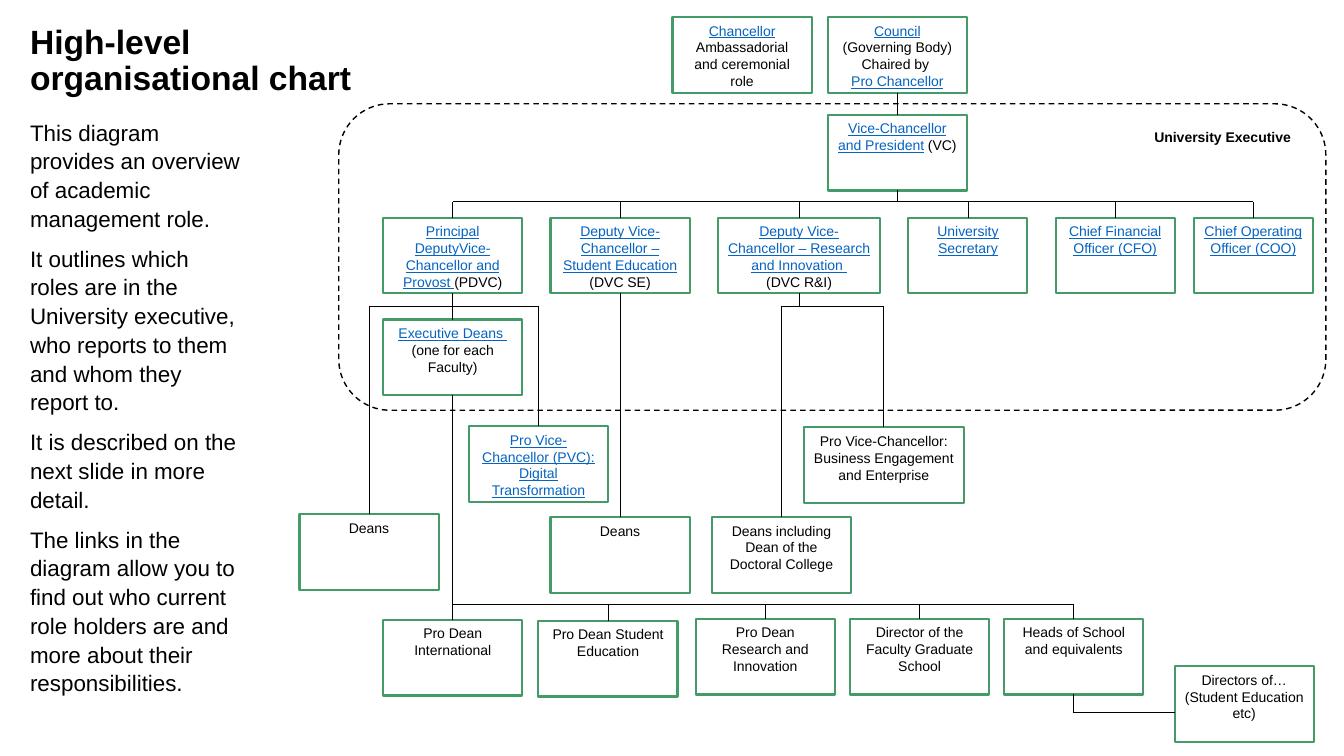
"""Build the high-level organisational chart slide of a university."""
from copy import deepcopy

from lxml.etree import SubElement
from pptx import Presentation
from pptx.dml.color import RGBColor
from pptx.enum.dml import MSO_LINE
from pptx.enum.shapes import MSO_CONNECTOR, MSO_SHAPE
from pptx.enum.text import MSO_ANCHOR, PP_ALIGN
from pptx.oxml.ns import qn
from pptx.util import Inches, Pt

COLOURS = {"border": "439B67", "link": "0563C1", "text": "000000"}
FONT = "Arial"
ROLE_WIDTH, OFFICER_WIDTH, ROLE_HEIGHT = 1.38, 1.18, 0.75
EXECUTIVE_TOP = 2.16
TOP, BOTTOM = 0, 2

INTRODUCTION = [
    "This diagram provides an overview of academic management role.",
    "It outlines which roles are in the University executive, who reports to them "
    "and whom they report to.",
    "It is described on the next slide in more detail.",
    "The links in the diagram allow you to find out who current role holders are "
    "and more about their responsibilities.",
]


def colour(name):
    """Return the named colour of the slide."""
    return RGBColor.from_string(COLOURS[name])


def add_run(paragraph, words, size, tone="text", bold=False):
    """Add one styled run, underlined when it is a link."""
    run = paragraph.add_run()
    run.text = words
    font = run.font
    font.name, font.size, font.bold = FONT, Pt(size), bold
    font.underline = tone == "link"
    font.color.rgb = colour(tone)
    return run


def add_lines(paragraph, words, size, tone):
    """Add words as runs, with a line break of the same style at each newline."""
    for number, line in enumerate(words.split("\n")):
        if number:
            paragraph.add_line_break()
            paragraph._p[-1].append(deepcopy(run._r.rPr))
        run = add_run(paragraph, line, size, tone)


def add_outline(slide, preset, left, top, width, height, tone, weight):
    """Add an unfilled shape with a coloured outline."""
    outline = slide.shapes.add_shape(
        preset, Inches(left), Inches(top), Inches(width), Inches(height))
    outline.shadow.inherit = False
    outline.fill.background()
    outline.line.color.rgb = colour(tone)
    outline.line.width = Pt(weight)
    return outline


def add_role(slide, left, top, *parts, width=ROLE_WIDTH):
    """Add a role box; each part is plain words or a (words, tone) pair."""
    role = add_outline(slide, MSO_SHAPE.RECTANGLE, left, top, width, ROLE_HEIGHT,
                       "border", 1.5)
    frame = role.text_frame
    frame.word_wrap = True
    frame.vertical_anchor = MSO_ANCHOR.TOP
    paragraph = frame.paragraphs[0]
    paragraph.alignment = PP_ALIGN.CENTER
    for part in parts:
        words, tone = (part, "text") if isinstance(part, str) else part
        add_lines(paragraph, words, 10, tone)
    return role


def link(words):
    """Mark words as a link."""
    return words, "link"


def add_text(slide, left, top, width, height, paragraphs, size, bold=False,
             spacing=1.0, after=0, anchor=MSO_ANCHOR.TOP, wrap=True):
    """Add a text box with one run in each paragraph."""
    frame = slide.shapes.add_textbox(
        Inches(left), Inches(top), Inches(width), Inches(height)).text_frame
    frame.word_wrap = wrap
    frame.vertical_anchor = anchor
    for number, words in enumerate(paragraphs):
        paragraph = frame.add_paragraph() if number else frame.paragraphs[0]
        paragraph.line_spacing = spacing
        paragraph.space_after = Pt(after)
        paragraph.alignment = PP_ALIGN.LEFT if wrap else PP_ALIGN.CENTER
        add_run(paragraph, words, size, bold=bold)


def add_line(slide, start, end):
    """Add a thin straight connector between two points in EMU."""
    line = slide.shapes.add_connector(MSO_CONNECTOR.STRAIGHT, *start, *end)
    line.line.color.rgb = colour("text")
    line.line.width = Pt(0.5)
    SubElement(line._element.spPr, qn("a:effectLst"))
    return line


def centre(role):
    """Return the horizontal centre of a role box."""
    return role.left + role.width // 2


def report_directly(slide, senior, junior):
    """Join a senior role straight down to a junior one."""
    line = add_line(slide, (centre(senior), senior.top + senior.height),
                    (centre(junior), junior.top))
    line.begin_connect(senior, BOTTOM)
    line.end_connect(junior, TOP)


def drop_to(slide, senior, level):
    """Run a line from the foot of a role down to a level."""
    x = centre(senior)
    line = add_line(slide, (x, senior.top + senior.height), (x, level))
    line.begin_connect(senior, BOTTOM)


def report_through_bar(slide, senior, juniors, level):
    """Join a senior role to several juniors through a horizontal bar."""
    bar = Inches(level)
    drop_to(slide, senior, bar)
    centres = [centre(junior) for junior in juniors]
    add_line(slide, (min(centres), bar), (max(centres), bar))
    for x, junior in zip(centres, juniors):
        line = add_line(slide, (x, junior.top), (x, bar))
        line.begin_connect(junior, TOP)


def main():
    """Build and save the slide."""
    deck = Presentation()
    deck.slide_width, deck.slide_height = Inches(13.33), Inches(7.5)
    slide = deck.slides.add_slide(deck.slide_layouts[6])

    add_role(slide, 6.67, 0.17, link("Chancellor\n"), "Ambassadorial and ceremonial role")
    council = add_role(slide, 8.21, 0.17, link("Council\n"),
                       "(Governing Body)\nChaired by \n", link("Pro Chancellor"))

    executive = add_outline(slide, MSO_SHAPE.ROUNDED_RECTANGLE,
                            3.36, 1.03, 9.79, 3.04, "text", 1)
    executive.line.dash_style = MSO_LINE.DASH
    add_text(slide, 11.34, 1.23, 1.57, 0.27, ["University Executive"], 10,
             bold=True, wrap=False)

    vice_chancellor = add_role(slide, 8.21, 1.14, link("Vice-Chancellor and President"), " (VC)")
    provost = add_role(slide, 3.8, EXECUTIVE_TOP,
                       link("Principal DeputyVice-Chancellor and Provost "), "(PDVC)")
    education = add_role(slide, 5.46, EXECUTIVE_TOP,
                         link("Deputy Vice-Chancellor – Student Education "), "(DVC SE)")
    research = add_role(slide, 7.12, EXECUTIVE_TOP,
                        link("Deputy Vice-Chancellor – Research and Innovation \n"),
                        "(DVC R&I)", width=1.61)
    officers = [
        add_role(slide, left, EXECUTIVE_TOP, link(title), width=OFFICER_WIDTH)
        for left, title in [(9.01, "University Secretary"),
                            (10.47, "Chief Financial Officer (CFO)"),
                            (11.84, "Chief Operating Officer (COO)")]]

    executive_deans = add_role(slide, 3.8, 3.17, link("Executive Deans \n"),
                               "(one for each Faculty)")
    digital = add_role(slide, 4.65, 4.23,
                       link("Pro Vice-Chancellor (PVC): Digital Transformation"))
    digital.text_frame.margin_left = digital.text_frame.margin_right = Inches(0.08)
    business = add_role(slide, 7.97, 4.24,
                        "Pro Vice-Chancellor: Business Engagement and Enterprise", width=1.59)
    provost_deans = add_role(slide, 2.97, 5.1, "Deans")
    education_deans = add_role(slide, 5.46, 5.13, "Deans")
    research_deans = add_role(slide, 7.06, 5.13, "Deans including Dean of the Doctoral College")
    faculty = [
        add_role(slide, left, top, title)
        for left, top, title in [(3.8, 6.15, "Pro Dean International"),
                                 (5.34, 6.16, "Pro Dean Student Education"),
                                 (6.9, 6.14, "Pro Dean Research and Innovation"),
                                 (8.43, 6.14, "Director of the Faculty Graduate School"),
                                 (9.96, 6.14, "Heads of School\nand equivalents")]]
    directors = add_role(slide, 11.65, 6.61, "Directors of… (Student Education etc)")

    report_directly(slide, council, vice_chancellor)
    report_directly(slide, education, education_deans)
    report_through_bar(slide, vice_chancellor, [provost, education, research, *officers], 2)
    report_through_bar(slide, provost, [provost_deans, executive_deans, digital], 3.04)
    report_through_bar(slide, research, [research_deans, business], 3.04)
    report_through_bar(slide, executive_deans, faculty, 6)
    heads, elbow = faculty[-1], Inches(7.07)
    drop_to(slide, heads, elbow)
    add_line(slide, (centre(heads), elbow), (directors.left, elbow))

    add_text(slide, 0.2, 0.06, 4.14, 1.1, ["High-level organisational chart"], 24,
             bold=True, spacing=0.9, after=6, anchor=MSO_ANCHOR.MIDDLE)
    add_text(slide, 0.2, 1.11, 2.3, 5.9, INTRODUCTION, 16, spacing=1.07, after=8)
    deck.save("out.pptx")


if __name__ == "__main__":
    main()
